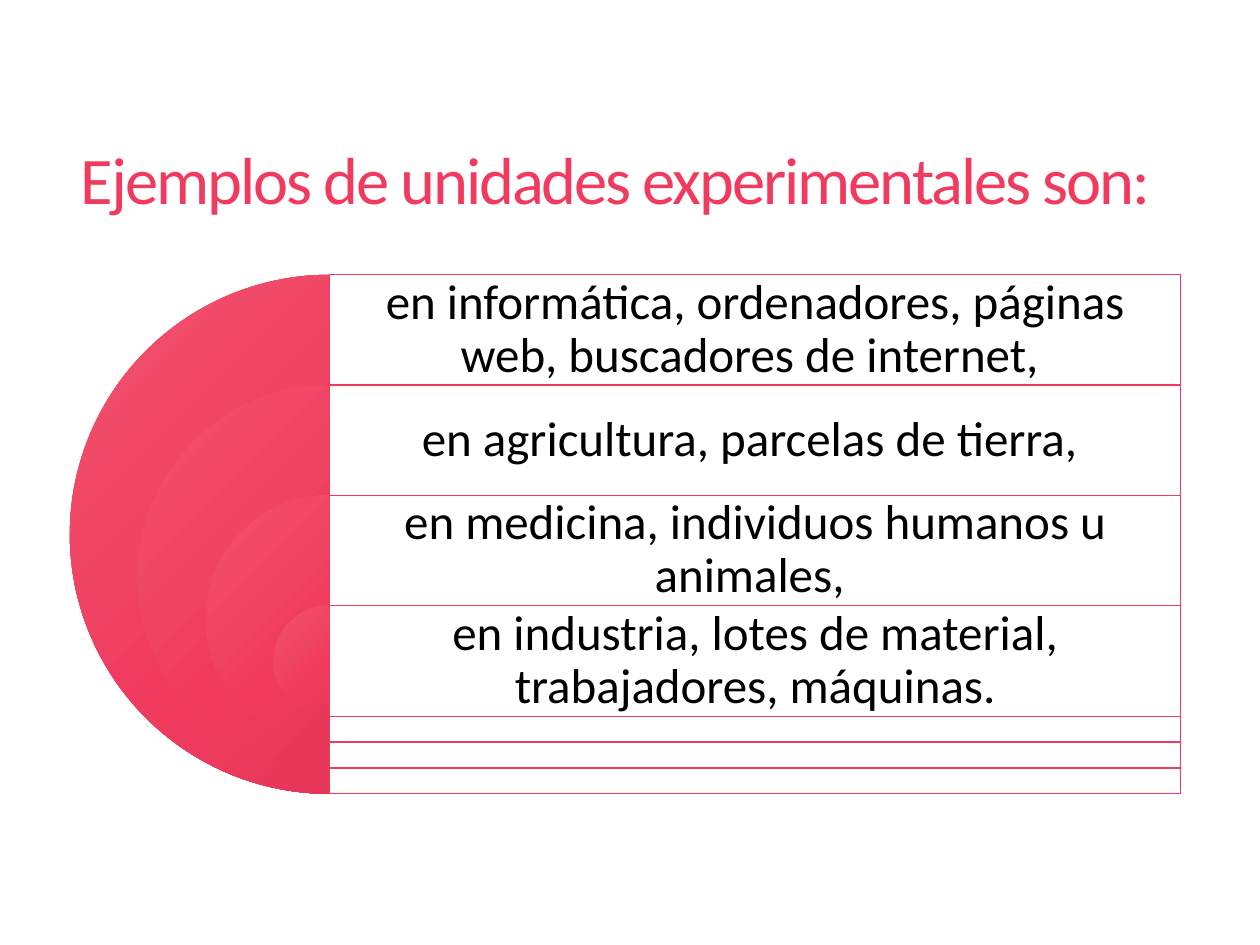
from copy import deepcopy

from pptx import Presentation
from pptx.dml.color import RGBColor
from pptx.enum import shapes as kinds, text as t
from pptx.oxml import ns, xmlchemy as xml
from pptx.util import Pt

PINK = "F03B5E"
SHADES = ("F1536D", PINK, "D93353")
ROWS = (
    "en informática, ordenadores, páginas web, buscadores de internet, ",
    "en agricultura, parcelas de tierra, ",
    "en medicina, individuos humanos u animales, ",
    "en industria, lotes de material, trabajadores, máquinas.",
)
MID, TOP = 188.2, 157      # centre of the discs, top of the first row
WIDE, HIGH = 486.6, 63     # size of one row
DISC, STEP = 296.6, 77.75  # widest disc, and how much each next one shrinks


def hue(code):
    return RGBColor.from_string(code)


def style(par, size, color, align):
    par.font.name = "Calibri"
    par.font.size = Pt(size)
    par.font.color.rgb = hue(color)
    par.line_spacing = 0.9
    par.alignment = align


def add_title(slide, words):
    title = slide.shapes.title
    title.left, title.top = Pt(39), Pt(39.6)
    title.width, title.height = Pt(636.5), Pt(130.3)
    frame = title.text_frame
    frame.text = words
    frame.auto_size = t.MSO_AUTO_SIZE.NONE
    frame.vertical_anchor = t.MSO_ANCHOR.MIDDLE
    par = frame.paragraphs[0]
    style(par, 38, PINK, t.PP_ALIGN.LEFT)
    par.runs[0].font._element.set("spc", "-120")


def add_shape(slide, kind, left, top, width, height):
    shape = slide.shapes.add_shape(kind, Pt(left), Pt(top), Pt(width), Pt(height))
    shape.shadow.inherit = False
    return shape


def add_half(slide, top, size):
    """Left half of a disc, shaded from upper left to lower right."""
    pie = add_shape(slide, kinds.MSO_SHAPE.PIE, MID - size / 2, top, size, size)
    pie.adjustments[0], pie.adjustments[1] = 54, 162
    pie.line.fill.background()
    pie.fill.gradient()
    pie.fill.gradient_angle = 315
    stops = pie._element.spPr.find(".//" + ns.qn("a:gsLst"))
    stops.insert(1, deepcopy(stops[0]))
    for i, stop in enumerate(pie.fill.gradient_stops):
        stop.position = i / 2
        stop.color.rgb = hue(SHADES[i])


def add_panel(slide, top, height):
    box = add_shape(slide, kinds.MSO_SHAPE.RECTANGLE, MID, top, WIDE, height)
    box.fill.solid()
    box.fill.fore_color.rgb = hue("FFFFFF")
    color = box._element.spPr.find(ns.qn("a:solidFill"))[0]
    alpha = xml.OxmlElement("a:alpha")
    alpha.set("val", "90000")
    color.append(alpha)
    box.line.color.rgb = hue(PINK)
    box.line.width = Pt(0.75)


def add_label(slide, top, words):
    box = slide.shapes.add_textbox(Pt(MID), Pt(top), Pt(WIDE), Pt(HIGH))
    frame = box.text_frame
    frame.word_wrap = True
    frame.vertical_anchor = t.MSO_ANCHOR.MIDDLE
    frame.margin_left = frame.margin_right = Pt(8.4)
    frame.margin_top = frame.margin_bottom = Pt(8.4)
    frame.text = words
    style(frame.paragraphs[0], 28, "000000", t.PP_ALIGN.CENTER)


def main():
    deck = Presentation()
    deck.slide_width, deck.slide_height = Pt(720), Pt(540)
    slide = deck.slides.add_slide(deck.slide_layouts[5])
    add_title(slide, "Ejemplos de unidades experimentales son:")
    for i, words in enumerate(ROWS):
        top, size = TOP + i * HIGH, DISC - i * STEP
        add_half(slide, top, size)
        add_panel(slide, top, size)
        add_label(slide, top, words)
    deck.save("out.pptx")


if __name__ == "__main__":
    main()
